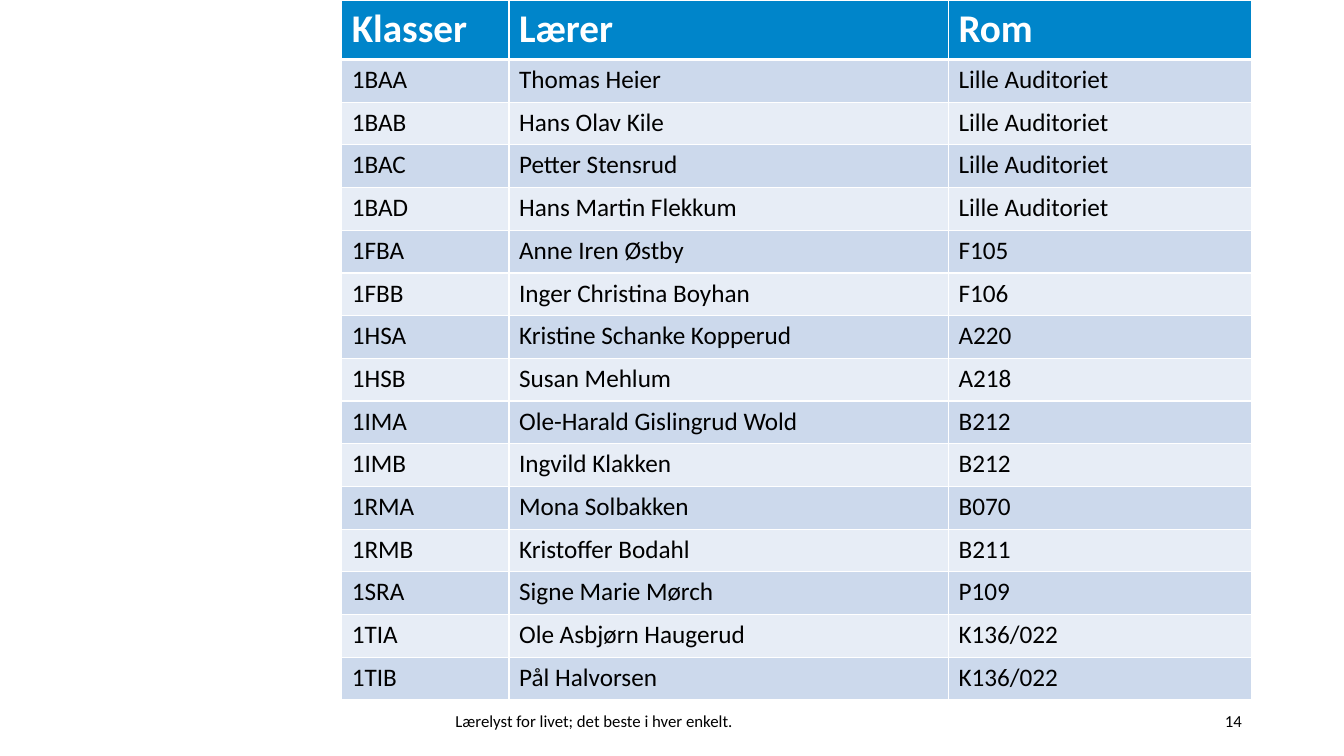
"""Build the slide that lists each class with its teacher and room."""
from dataclasses import dataclass
from typing import NamedTuple

from lxml import etree
from pptx import Presentation
from pptx.dml.color import RGBColor
from pptx.enum.text import MSO_ANCHOR, PP_ALIGN
from pptx.oxml.ns import qn
from pptx.slide import Slide
from pptx.table import _Cell
from pptx.text.text import TextFrame
from pptx.util import Inches, Length, Pt

LEFT, RIGHT = PP_ALIGN.LEFT, PP_ALIGN.RIGHT
TOP, MIDDLE = MSO_ANCHOR.TOP, MSO_ANCHOR.MIDDLE
GRID_COLUMNS, GRID_ROWS = 160, 90
CELLS_PER_INCH = 12
BLANK_LAYOUT = 6


@dataclass(frozen=True)
class Theme:
    """Colours, type sizes and line widths of the slide."""

    font: str = "Calibri"
    header_fill: str = "0085CA"
    bands: tuple[str, str] = ("CCD9EC", "E7EDF6")
    light: str = "FFFFFF"
    dark: str = "000000"
    header_size: int = 28
    body_size: int = 18
    footer_size: int = 12
    rule: int = 1
    header_rule: int = 3


class ClassRow(NamedTuple):
    """One line of the table."""

    class_code: str
    teacher: str
    room: str


class FooterBox(NamedTuple):
    """A text box in the footer, measured in grid columns."""

    text: str
    left: float
    width: float
    align: PP_ALIGN


THEME = Theme()
TABLE_LEFT = 40.68
TABLE_BOTTOM = 83.4
HEADER_HEIGHT = 7.08
FOOTER_HEIGHT = 4.8
COLUMN_WIDTHS = (19.92, 52.32, 36.12)
HEADER = ClassRow("Klasser", "Lærer", "Rom")
CLASSES = (
    ClassRow("1BAA", "Thomas Heier", "Lille Auditoriet"),
    ClassRow("1BAB", "Hans Olav Kile", "Lille Auditoriet"),
    ClassRow("1BAC", "Petter Stensrud", "Lille Auditoriet"),
    ClassRow("1BAD", "Hans Martin Flekkum", "Lille Auditoriet"),
    ClassRow("1FBA", "Anne Iren Østby", "F105"),
    ClassRow("1FBB", "Inger Christina Boyhan", "F106"),
    ClassRow("1HSA", "Kristine Schanke Kopperud", "A220"),
    ClassRow("1HSB", "Susan Mehlum", "A218"),
    ClassRow("1IMA", "Ole-Harald Gislingrud Wold", "B212"),
    ClassRow("1IMB", "Ingvild Klakken", "B212"),
    ClassRow("1RMA", "Mona Solbakken", "B070"),
    ClassRow("1RMB", "Kristoffer Bodahl", "B211"),
    ClassRow("1SRA", "Signe Marie Mørch", "P109"),
    ClassRow("1TIA", "Ole Asbjørn Haugerud", "K136/022"),
    ClassRow("1TIB", "Pål Halvorsen", "K136/022"),
)
FOOTERS = (
    FooterBox("Lærelyst for livet; det beste i hver enkelt.", 53.04, 54, LEFT),
    FooterBox("14", 113.04, 36, RIGHT),
)


def grid(cells: float) -> Length:
    """Turn a number of grid cells into a length."""
    return Inches(cells / CELLS_PER_INCH)


def write_text(frame: TextFrame, text: str, *, size: int, color: str = THEME.dark,
               bold: bool = False, align: PP_ALIGN = LEFT) -> None:
    """Put one formatted paragraph in a text frame."""
    paragraph = frame.paragraphs[0]
    paragraph.alignment = align
    run = paragraph.add_run()
    run.text = text
    run.font.name = THEME.font
    run.font.size = Pt(size)
    run.font.bold = bold
    run.font.color.rgb = RGBColor.from_string(color)


def set_borders(cell: _Cell, top: int, bottom: int) -> None:
    """Draw the light rules around a cell, with widths in points."""
    properties = cell._tc.get_or_add_tcPr()
    widths = {"a:lnL": THEME.rule, "a:lnR": THEME.rule, "a:lnT": top, "a:lnB": bottom}
    for position, (tag, width) in enumerate(widths.items()):
        line = etree.Element(qn(tag), w=str(Pt(width)))
        fill = etree.SubElement(line, qn("a:solidFill"))
        etree.SubElement(fill, qn("a:srgbClr"), val=THEME.light)
        properties.insert(position, line)


def add_class_table(slide: Slide) -> None:
    """Add the table of classes, teachers and rooms."""
    lines = (HEADER, *CLASSES)
    table = slide.shapes.add_table(
        len(lines), len(COLUMN_WIDTHS), grid(TABLE_LEFT), 0,
        grid(sum(COLUMN_WIDTHS)), grid(TABLE_BOTTOM)).table
    for column, width in zip(table.columns, COLUMN_WIDTHS):
        column.width = grid(width)
    body_height = (TABLE_BOTTOM - HEADER_HEIGHT) / len(CLASSES)
    for index, (row, line) in enumerate(zip(table.rows, lines)):
        is_header = index == 0
        row.height = grid(HEADER_HEIGHT if is_header else body_height)
        fill = THEME.header_fill if is_header else THEME.bands[(index - 1) % 2]
        for cell, text in zip(row.cells, line):
            cell.vertical_anchor = TOP
            cell.fill.solid()
            cell.fill.fore_color.rgb = RGBColor.from_string(fill)
            set_borders(cell,
                        top=THEME.header_rule if index == 1 else THEME.rule,
                        bottom=THEME.header_rule if is_header else THEME.rule)
            write_text(cell.text_frame, text, bold=is_header,
                       size=THEME.header_size if is_header else THEME.body_size,
                       color=THEME.light if is_header else THEME.dark)


def add_footer(slide: Slide, footer: FooterBox) -> None:
    """Add one text box directly below the table."""
    shape = slide.shapes.add_textbox(grid(footer.left), grid(TABLE_BOTTOM),
                                     grid(footer.width), grid(FOOTER_HEIGHT))
    frame = shape.text_frame
    frame.word_wrap = True
    frame.vertical_anchor = MIDDLE
    write_text(frame, footer.text, size=THEME.footer_size, align=footer.align)


def main() -> None:
    """Build and save the presentation."""
    presentation = Presentation()
    presentation.slide_width = grid(GRID_COLUMNS)
    presentation.slide_height = grid(GRID_ROWS)
    slide = presentation.slides.add_slide(presentation.slide_layouts[BLANK_LAYOUT])
    add_class_table(slide)
    for footer in FOOTERS:
        add_footer(slide, footer)
    presentation.save("out.pptx")


if __name__ == "__main__":
    main()
